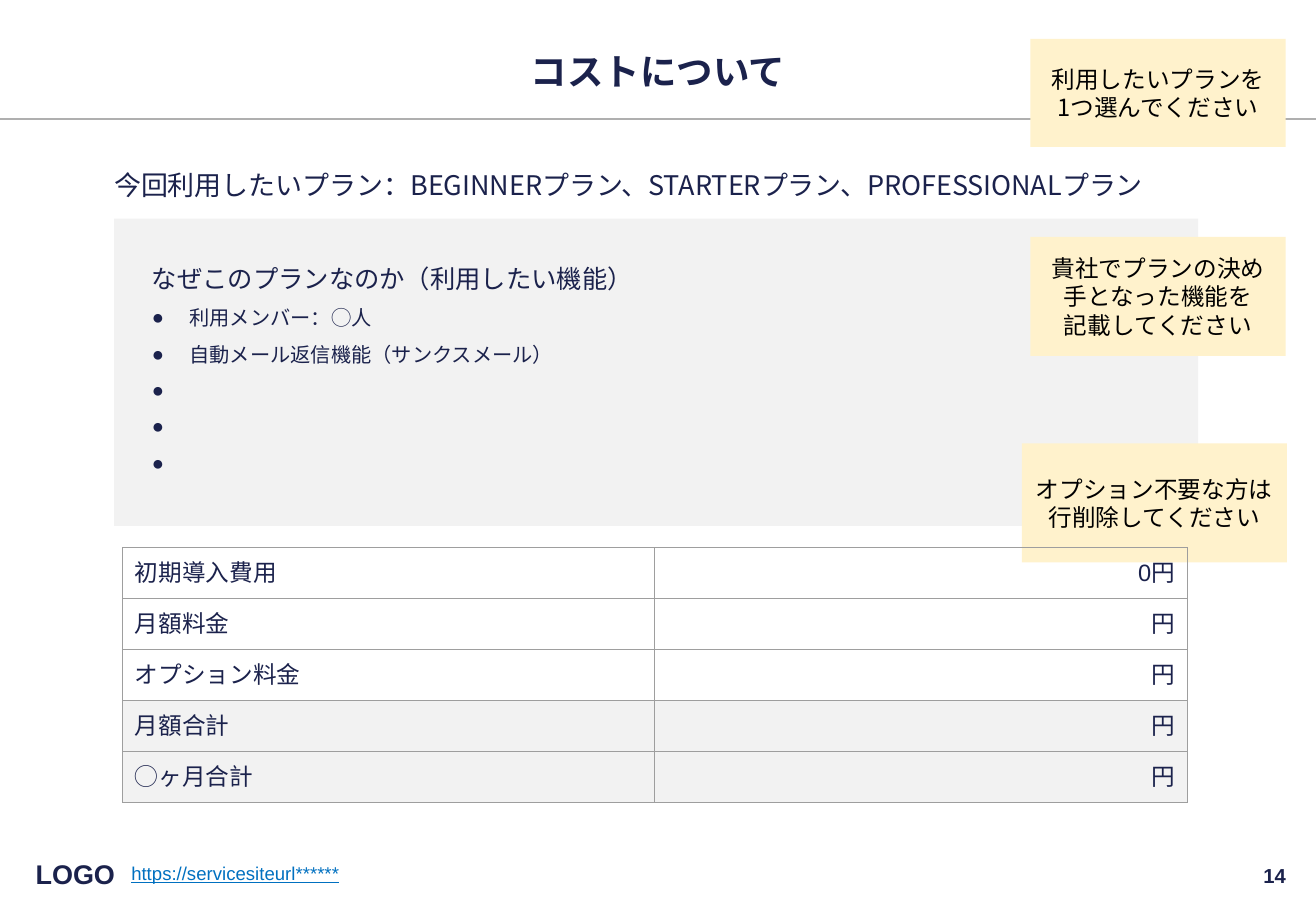
from lxml import etree
from pptx import Presentation
from pptx.dml.color import RGBColor
from pptx.enum.shapes import MSO_CONNECTOR, MSO_SHAPE
from pptx.enum.text import MSO_ANCHOR, MSO_AUTO_SIZE, PP_ALIGN
from pptx.oxml.ns import qn
from pptx.util import Inches, Pt

LEFT, CENTER, RIGHT = PP_ALIGN.LEFT, PP_ALIGN.CENTER, PP_ALIGN.RIGHT
TOP, MIDDLE = MSO_ANCHOR.TOP, MSO_ANCHOR.MIDDLE
NO_FIT = MSO_AUTO_SIZE.NONE
RECTANGLE = MSO_SHAPE.RECTANGLE
STRAIGHT = MSO_CONNECTOR.STRAIGHT

ARIAL, NOTO = "Arial", "Noto Sans CJK JP"
COLORS = {"navy": "1B224C", "gray": "F2F2F2", "cream": "FFF2CC", "black": "000000",
          "link": "0070C0", "rule": "AFAFAF", "border": "9E9E9E"}


def rgb(name):
    return RGBColor.from_string(COLORS[name])


def add_color(parent, tag, name):
    """Append an XML element that holds one colour."""
    holder = etree.SubElement(parent, qn(tag))
    etree.SubElement(holder, qn("a:srgbClr"), val=COLORS[name])


class CostPage:
    """Holds the style and the current slide."""

    def __init__(self, deck):
        self.page = deck.slides.add_slide(deck.slide_layouts[5])
        self.shapes = self.page.shapes

    def span(self, para, text, size, font=ARIAL, color="navy", bold=False, underline=False):
        span = para.add_run()
        span.text = text
        span.font.size = Pt(size)
        span.font.name = font
        span.font.bold = bold
        span.font.underline = underline
        span.font.color.rgb = rgb(color)
        etree.SubElement(span.font._element, qn("a:ea"), typeface=font)

    def frame(self, shape, insets, anchor=TOP):
        frame = shape.text_frame
        frame.word_wrap = True
        frame.auto_size = NO_FIT
        frame.vertical_anchor = anchor
        (frame.margin_left, frame.margin_top,
         frame.margin_right, frame.margin_bottom) = [Inches(inset) for inset in insets]
        return frame

    def para(self, frame, align=LEFT, spacing=None):
        first = frame.paragraphs[0]
        para = frame.add_paragraph() if first.runs else first
        para.alignment = align
        if spacing:
            para.line_spacing = spacing
        return para

    def indent(self, para, margin, first=0):
        properties = para._p.get_or_add_pPr()
        properties.set("marL", str(Inches(margin)))
        properties.set("indent", str(Inches(first)))
        return properties

    def bullet(self, frame, text):
        para = self.para(frame, spacing=1.5)
        properties = self.indent(para, 0.31, -0.31)
        add_color(properties, "a:buClr", "navy")
        etree.SubElement(properties, qn("a:buFont"), typeface=ARIAL)
        etree.SubElement(properties, qn("a:buChar"), char="●")
        self.span(para, text, 12)

    def title(self, place, text):
        title = self.shapes.title
        title.left, title.top, title.width, title.height = map(Inches, place)
        frame = self.frame(title, (0.04, 0.08, 0.04, 0.04), MIDDLE)
        self.span(self.para(frame, CENTER, 0.9), text, 21.6, bold=True)

    def text(self, place, text, size, align=LEFT, anchor=TOP, spacing=None,
             insets=(0.04,) * 4, **style):
        box = self.shapes.add_textbox(*map(Inches, place))
        para = self.para(self.frame(box, insets, anchor), align, spacing)
        self.span(para, text, size, **style)
        return para

    def rectangle(self, place, fill, insets, anchor=TOP):
        box = self.shapes.add_shape(RECTANGLE, *map(Inches, place))
        box.shadow.inherit = False
        box.fill.solid()
        box.fill.fore_color.rgb = rgb(fill)
        box.line.fill.background()
        return self.frame(box, insets, anchor)

    def note(self, place, lines):
        frame = self.rectangle(place, "cream", (0.1,) * 4, MIDDLE)
        for line in lines:
            self.span(self.para(frame, CENTER), line, 14, NOTO, "black")

    def rule(self, y, width):
        line = self.shapes.add_connector(STRAIGHT, 0, Inches(y), Inches(width), Inches(y))
        line.line.color.rgb = rgb("rule")
        line.line.width = Pt(0.75)
        etree.SubElement(line._element.spPr, qn("a:effectLst"))

    def cell(self, cell, text, align, shaded):
        properties = cell._tc.get_or_add_tcPr()
        for side in ("a:lnL", "a:lnR", "a:lnT", "a:lnB"):
            edge = etree.SubElement(properties, qn(side), w=str(Pt(0.75)))
            add_color(edge, "a:solidFill", "border")
        if shaded:
            cell.fill.solid()
            cell.fill.fore_color.rgb = rgb("gray")
        else:
            cell.fill.background()
        cell.margin_left = cell.margin_right = Inches(0.1)
        cell.margin_top = cell.margin_bottom = Inches(0.1)
        self.span(self.para(cell.text_frame, align), text, 14)

    def table(self, place, rows, shaded_from):
        table = self.shapes.add_table(len(rows), 2, *map(Inches, place)).table
        table.first_row = table.horz_banding = False
        for index, (label, amount) in enumerate(rows):
            shaded = index >= shaded_from
            self.cell(table.cell(index, 0), label, LEFT, shaded)
            self.cell(table.cell(index, 1), amount, RIGHT, shaded)


def main():
    deck = Presentation()
    deck.slide_width, deck.slide_height = Inches(10.83), Inches(7.5)
    cost = CostPage(deck)

    # Header
    cost.rule(0.98, 10.83)
    cost.title((0.65, 0.39, 9.53, 0.39), "コストについて")
    plan = cost.text((0.65, 1.27, 9.47, 0.35),
                     "今回利用したいプラン：BEGINNERプラン、STARTERプラン、PROFESSIONALプラン",
                     16, spacing=1.3, font=NOTO)
    cost.indent(plan, 0.25)

    # Reasons for the plan
    reasons = cost.rectangle((0.94, 1.8, 8.92, 2.53), "gray", (0.31, 0.24, 0.31, 0.24))
    cost.span(cost.para(reasons, spacing=1.5), "なぜこのプランなのか（利用したい機能）", 15)
    for reason in ("利用メンバー：◯人", "自動メール返信機能（サンクスメール）", " ", " ", " "):
        cost.bullet(reasons, reason)

    # Notes and cost table
    cost.note((8.48, 0.32, 2.1, 0.89), ("利用したいプランを", "1つ選んでください"))
    cost.note((8.48, 1.95, 2.1, 0.98),
              ("貴社でプランの決め手となった機能を", "記載してください"))
    cost.note((8.41, 3.65, 2.18, 0.98), ("オプション不要な方は", "行削除してください"))
    cost.table((1.01, 4.51, 8.76, 2.1),
               (("初期導入費用", "0円"), ("月額料金", "円"), ("オプション料金", "円"),
                ("月額合計", "円"), ("◯ヶ月合計", "円")), shaded_from=3)

    # Footer
    cost.text((0.21, 7, 0.82, 0.39), "LOGO", 16, CENTER, MIDDLE, bold=True)
    cost.text((1.04, 7.06, 5.75, 0.26), "https://servicesiteurl******", 11,
              color="link", underline=True)
    cost.text((8.24, 7.01, 2.44, 0.39), "14", 12, RIGHT, MIDDLE,
              insets=(0.1, 0.05, 0.1, 0.05), bold=True)

    deck.save("out.pptx")


if __name__ == "__main__":
    main()
